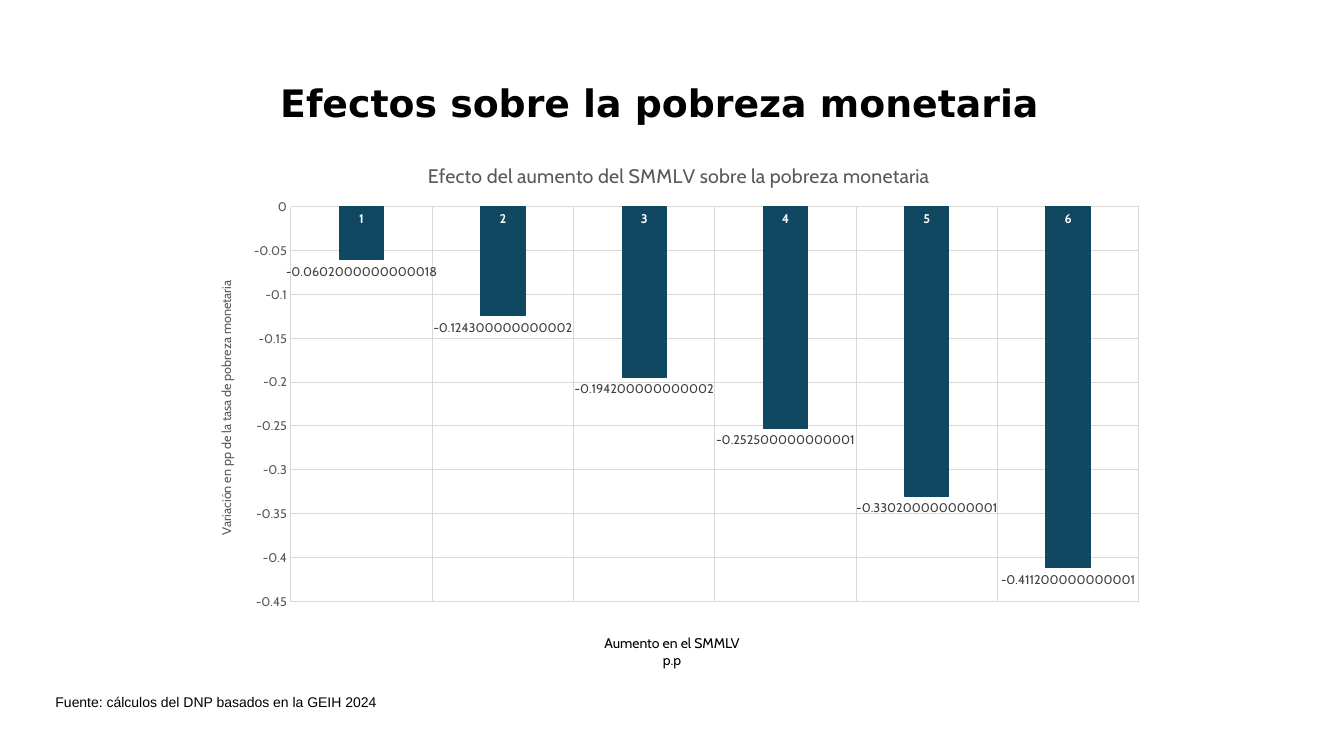
import pptx
import pptx.chart.data
import pptx.dml.color
import pptx.enum.chart
import pptx.enum.text
import pptx.oxml
import pptx.oxml.ns
import pptx.util

Inches = pptx.util.Inches
Points = pptx.util.Pt
Align = pptx.enum.text.PP_ALIGN
Anchor = pptx.enum.text.MSO_ANCHOR
qualify = pptx.oxml.ns.qn
COLORS = {
    name: pptx.dml.color.RGBColor.from_string(value)
    for name, value in {
        "text": "000000",
        "muted": "595959",
        "label": "404040",
        "bar": "104862",
        "grid": "D9D9D9",
        "white": "FFFFFF",
    }.items()
}


def write(frame, text, size=10, font="Cabin", color="text", bold=False,
          align=Align.CENTER, spacing=None, plain=False):
    for index, line in enumerate(text.split("\n")):
        para = frame.paragraphs[0] if index == 0 else frame.add_paragraph()
        if plain:
            properties = para._p.get_or_add_pPr()
            properties.set("marL", "0")
            properties.set("indent", "0")
            properties.append(pptx.oxml.parse_xml(
                f"<a:buNone {pptx.oxml.ns.nsdecls('a')}/>"))
            para.space_before = Points(0)
        para.alignment = align
        if spacing:
            para.line_spacing = spacing
        span = para.add_run()
        span.text = line
        span.font.size = Points(size)
        span.font.name = font
        span.font.bold = bold
        span.font.color.rgb = COLORS[color]


def place(element, position, **measures):
    """Fix a chart part by fractions of the chart's width and height."""
    for layout in element.findall(qualify("c:layout")):
        element.remove(layout)
    target = '<c:layoutTarget val="inner"/>' if "w" in measures else ""
    modes = "".join(f'<c:{key}Mode val="edge"/>' for key in ("x", "y"))
    values = "".join(f'<c:{key} val="{value}"/>' for key, value in measures.items())
    element.insert(position, pptx.oxml.parse_xml(
        f"<c:layout {pptx.oxml.ns.nsdecls('c')}><c:manualLayout>"
        f"{target}{modes}{values}</c:manualLayout></c:layout>"))


deck = pptx.Presentation()
deck.slide_width, deck.slide_height = Inches(13.33), Inches(7.5)
page = deck.slides.add_slide(deck.slide_layouts[1])

# Title
title = page.shapes.title
title.left, title.top = Inches(0.79), Inches(0.77)
title.width, title.height = Inches(11.5), Inches(0.55)
title.text_frame.vertical_anchor = Anchor.MIDDLE
write(title.text_frame, "Efectos sobre la pobreza monetaria", size=27,
      font="DejaVu Sans", bold=True, spacing=0.9)

# Source line
source = page.placeholders[1]
source.left, source.top = Inches(0.45), Inches(6.8)
source.width, source.height = Inches(11.64), Inches(0.35)
source.text_frame.vertical_anchor = Anchor.MIDDLE
write(source.text_frame, "Fuente: cálculos del DNP basados en la GEIH 2024",
      font="Arial", align=Align.LEFT, spacing=0.9, plain=True)

# Caption of the category axis
caption = page.shapes.add_textbox(Inches(5.75), Inches(6.25), Inches(1.83), Inches(0.44))
caption.text_frame.word_wrap = True
write(caption.text_frame, "Aumento en el SMMLV\np.p")

# Column chart
effects = pptx.chart.data.CategoryChartData()
effects.categories = ["1", "2", "3", "4", "5", "6"]
effects.add_series("Series 1", [
    -0.0602000000000018, -0.124300000000002, -0.194200000000002,
    -0.252500000000001, -0.330200000000001, -0.411200000000001])
chart = page.shapes.add_chart(
    pptx.enum.chart.XL_CHART_TYPE.COLUMN_CLUSTERED,
    Inches(1.94), Inches(1.39), Inches(9.45), Inches(4.72), effects).chart
chart.font.name, chart.font.size = "Cabin", Points(10)
chart.has_legend = False
chart.has_title = True
write(chart.chart_title.text_frame,
      "Efecto del aumento del SMMLV sobre la pobreza monetaria", size=14, color="muted")
place(chart.chart_title._element, 1, x=0.24, y=0.04)
place(chart._chartSpace.chart.plotArea, 0, x=0.1, y=0.14, w=0.89, h=0.83)

# Axes
category_axis, value_axis = chart.category_axis, chart.value_axis
for axis, color in ((category_axis, "white"), (value_axis, "muted")):
    axis.has_major_gridlines = True
    axis.major_gridlines.format.line.color.rgb = COLORS["grid"]
    axis.major_gridlines.format.line.width = Points(0.75)
    axis.major_tick_mark = pptx.enum.chart.XL_TICK_MARK.NONE
    axis.tick_labels.font.name = "Cabin"
    axis.tick_labels.font.size = Points(9)
    axis.tick_labels.font.bold = color == "white"
    axis.tick_labels.font.color.rgb = COLORS[color]
category_axis.format.line.color.rgb = COLORS["grid"]
category_axis.format.line.width = Points(0.75)
value_axis.format.line.fill.background()
value_axis.minimum_scale, value_axis.maximum_scale = -0.45, 0
value_axis.major_unit = 0.05
value_axis.has_title = True
axis_title = value_axis.axis_title
write(axis_title.text_frame, "Variación en pp de la tasa de pobreza monetaria",
      size=9, color="muted")
axis_title.text_frame._txBody.bodyPr.set("rot", "-5400000")
place(axis_title._element, 1, x=0.02, y=0.29)

# Columns and their values
plot = chart.plots[0]
plot.gap_width, plot.overlap = 219, -27
plot.vary_by_categories = False
series = plot.series[0]
series.invert_if_negative = False
series.format.fill.solid()
series.format.fill.fore_color.rgb = COLORS["bar"]
series.format.line.color.rgb = COLORS["bar"]
series.format.line.width = Points(0.75)
labels = series.data_labels
labels.show_value = True
labels.number_format, labels.number_format_is_linked = "General", False
labels.position = pptx.enum.chart.XL_LABEL_POSITION.OUTSIDE_END
labels.font.name, labels.font.size = "Cabin", Points(9)
labels.font.color.rgb = COLORS["label"]

deck.save("out.pptx")
